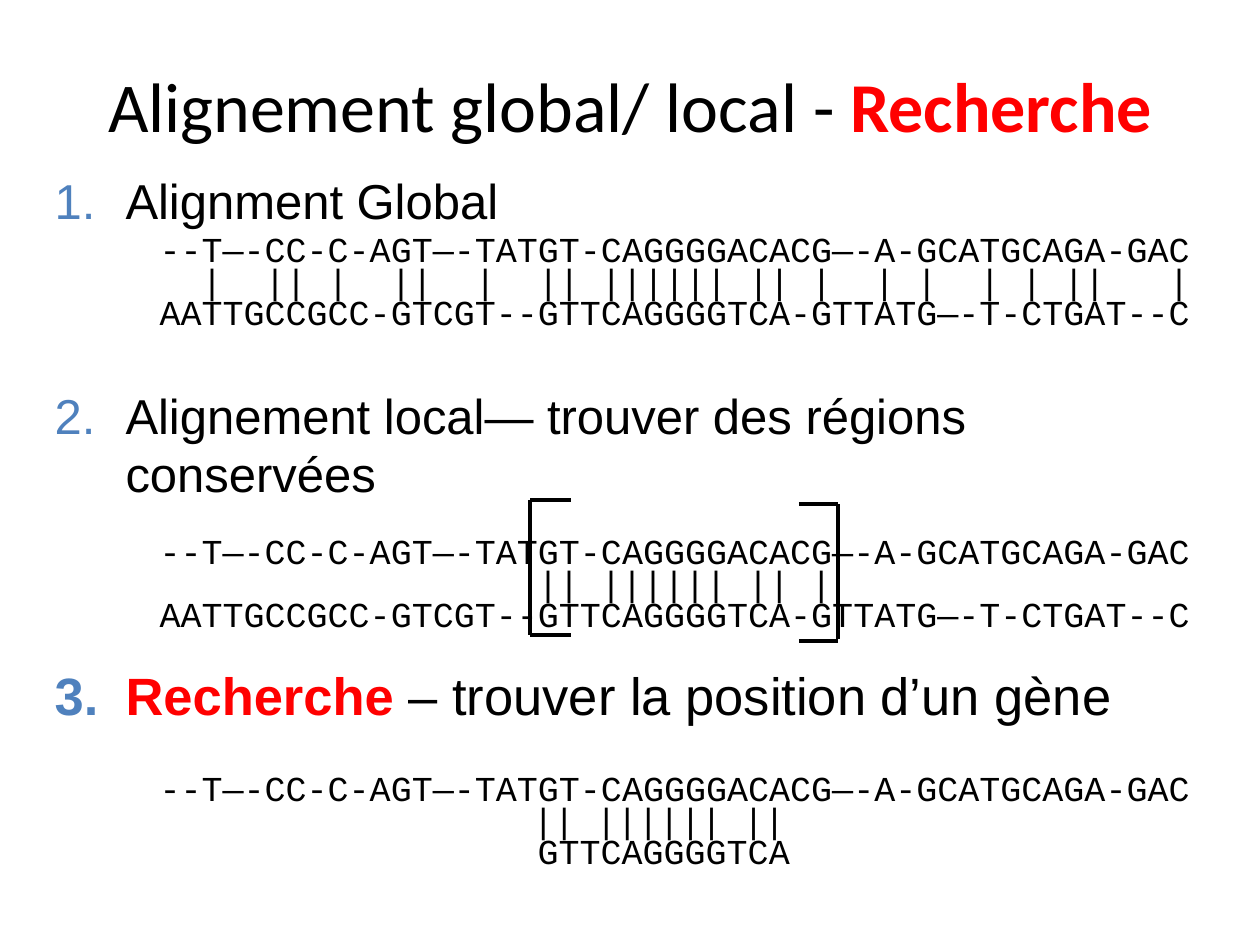
"""Build a slide comparing global alignment, local alignment and gene search."""
from lxml.etree import SubElement
from pptx import Presentation
from pptx.dml.color import RGBColor
from pptx.enum.shapes import MSO_CONNECTOR as Connector
from pptx.enum.text import MSO_ANCHOR as Anchor, MSO_AUTO_SIZE as AutoSize, PP_ALIGN as Align
from pptx.oxml.ns import qn
from pptx.util import Pt


def color(hex_string):
    return RGBColor.from_string(hex_string)


def add_sequence(text, top, column=4, left=36, width=671.8):
    box = slide.shapes.add_textbox(Pt(left), Pt(top), Pt(width), Pt(31.2))
    frame = box.text_frame
    frame.word_wrap = True
    frame.margin_left = Pt(7.2 + column * CHARACTER_WIDTH)
    frame.margin_top = Pt(7.6)
    paragraph = frame.paragraphs[0]
    paragraph.font.name, paragraph.font.size = "Courier New", Pt(20)
    paragraph.font.color.rgb = color(BLACK)
    paragraph.add_run().text = text


BLACK, RED, BLUE = "000000", "FF0000", "4F81BD"
CHARACTER_WIDTH = 12
ROW_STEP = 18
SEQUENCE = "--T—-CC-C-AGT—-TATGT-CAGGGGACACG—-A-GCATGCAGA-GAC"
TARGET = "AATTGCCGCC-GTCGT--GTTCAGGGGTCA-GTTATG—-T-CTGAT--C"

presentation = Presentation()
presentation.slide_width, presentation.slide_height = Pt(720), Pt(540)
slide = presentation.slides.add_slide(presentation.slide_layouts[1])
title, body = slide.placeholders

title.left, title.top, title.width, title.height = Pt(36), Pt(15), Pt(648), Pt(90)
title.text_frame.vertical_anchor = Anchor.MIDDLE
title.text_frame.auto_size = AutoSize.NONE
paragraph = title.text_frame.paragraphs[0]
paragraph.alignment = Align.CENTER
paragraph.font.name, paragraph.font.size = "Calibri", Pt(40)
for text, hex_string, bold in [("Alignement global/ local - ", BLACK, False), ("Recherche", RED, True)]:
    run = paragraph.add_run()
    run.text, run.font.bold = text, bold
    run.font.color.rgb = color(hex_string)

body.left, body.top, body.width, body.height = Pt(24), Pt(91.4), Pt(660), Pt(404.6)
frame = body.text_frame
frame.auto_size = AutoSize.NONE
frame.margin_top = Pt(6)
topics = [
    (28, 0, [("Alignment Global", BLACK, False)]),
    (28, 89, [("Alignement local— trouver des régions conservées", BLACK, False)]),
    (30, 91.5, [("Recherche", RED, True), (" – trouver la position d’un gène", BLACK, False)]),
]
for number, (size, space_before, parts) in enumerate(topics, 1):
    paragraph = frame.paragraphs[0] if number == 1 else frame.add_paragraph()
    properties = paragraph._p.get_or_add_pPr()
    properties.set("marL", str(Pt(40.5)))
    properties.set("indent", str(Pt(-40.5)))
    SubElement(SubElement(properties, qn("a:buClr")), qn("a:srgbClr"), val=BLUE)
    SubElement(properties, qn("a:buFont"), typeface="Arial")
    SubElement(properties, qn("a:buAutoNum"), type="arabicPeriod", startAt=str(number))
    paragraph.space_before = Pt(space_before)
    paragraph.font.name, paragraph.font.size = "Arial", Pt(size)
    for text, hex_string, bold in parts:
        run = paragraph.add_run()
        run.text, run.font.bold = text, bold
        run.font.color.rgb = color(hex_string)

for top, matches, column in [
    (122.4, "|  || |  ||  |  || |||||| || |  | |  | | ||   |", 6),
    (295.2, "|| |||||| || |", 22),
]:
    add_sequence(SEQUENCE, top)
    add_sequence(matches, top + ROW_STEP, column)
    add_sequence(TARGET, top + 2 * ROW_STEP)

search_top = 430.6
add_sequence(SEQUENCE, search_top)
add_sequence("|| |||||| ||", search_top + ROW_STEP, 0, 297.4, 170)
add_sequence("GTTCAGGGGTCA", search_top + 2 * ROW_STEP, 22)

for spine, tip, top, spine_bottom, bottom in [
    (303.1, 326.2, 285.8, 362.9, 362.9),
    (478.8, 456.5, 288, 365, 366.5),
]:
    for start_x, start_y, end_x, end_y in [
        (tip, top, spine, top),
        (spine, top, spine, spine_bottom),
        (tip, bottom, spine, bottom),
    ]:
        line = slide.shapes.add_connector(Connector.STRAIGHT, Pt(start_x), Pt(start_y), Pt(end_x), Pt(end_y))
        line.line.color.rgb = color(BLACK)
        line.line.width = Pt(2.25)
        SubElement(line._element.spPr, qn("a:effectLst"))

presentation.save("out.pptx")
